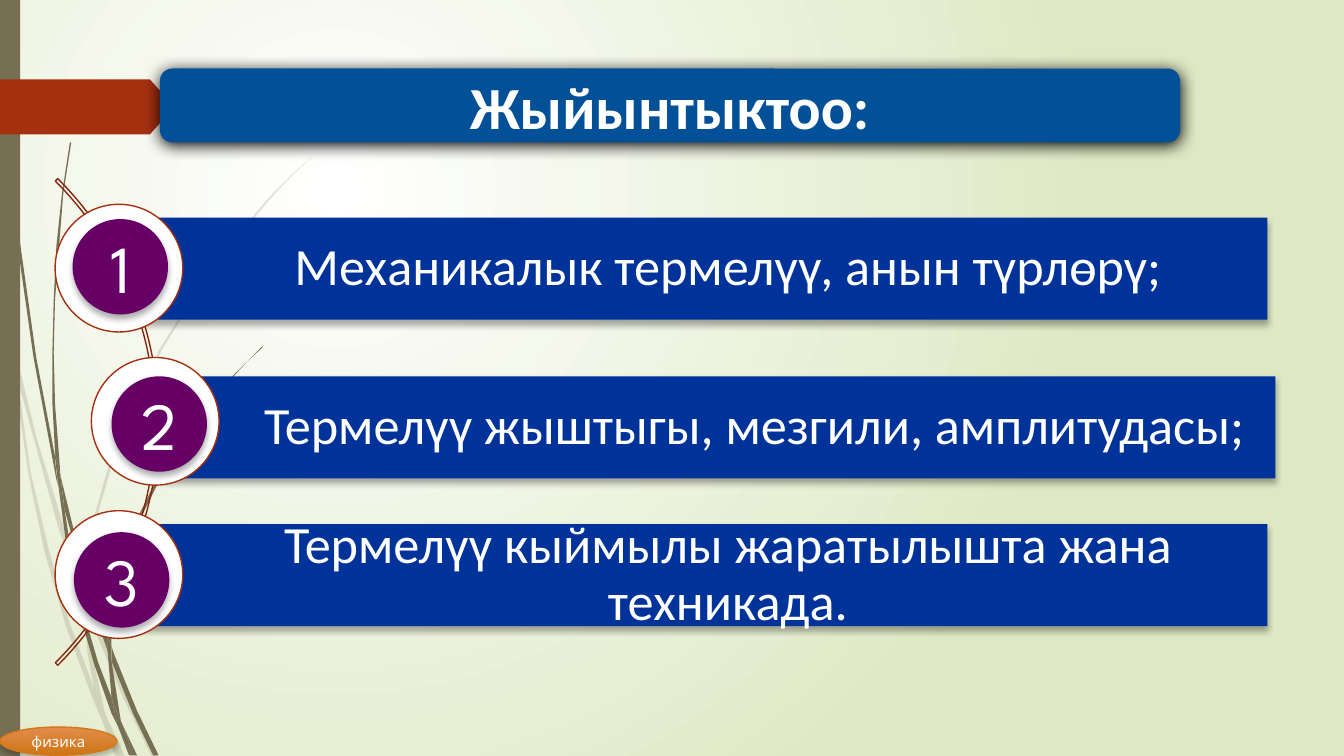
from dataclasses import dataclass
from typing import Optional

import pptx
import pptx.dml.color
import pptx.enum.shapes
import pptx.enum.text
import pptx.oxml
import pptx.oxml.ns
import pptx.util
from lxml import etree

RGB = pptx.dml.color.RGBColor
Inches = pptx.util.Inches
Pt = pptx.util.Pt
MSO = pptx.enum.shapes.MSO_SHAPE
ALIGN = pptx.enum.text.PP_ALIGN
ANCHOR = pptx.enum.text.MSO_ANCHOR
qn = pptx.oxml.ns.qn

WHITE = RGB(0xFF, 0xFF, 0xFF)
PALE_GREEN = RGB(0xDF, 0xE8, 0xC4)
OLIVE = RGB(0x76, 0x6F, 0x54)
RUST = RGB(0xA5, 0x30, 0x10)
DARK_RUST = RGB(0x84, 0x26, 0x0D)
ORANGE_LIGHT = RGB(0xE1, 0x8D, 0x4C)
ORANGE_DARK = RGB(0xCF, 0x75, 0x16)
ORANGE_LINE = RGB(0xD4, 0x78, 0x17)
NAVY = RGB(0x00, 0x33, 0x99)
PURPLE = RGB(0x66, 0x00, 0x66)
TITLE_BLUE = RGB(0x02, 0x51, 0x98)

WIDTH = 10
HEIGHT = WIDTH * 9 / 16
TITLE_BOX = (1.19, 0.51, 7.59, 0.55)


@dataclass
class Shadow:
    alpha: int
    blur: float
    dist: float


@dataclass
class Item:
    text: str
    bar: tuple
    ring: tuple
    disc: tuple


SOFT = Shadow(32, 3.5, 2.2)
BADGE_SHADOW = Shadow(25, 3, 2)
TITLE_SHADOW = Shadow(100, 8.5, 1)

ITEMS = [
    Item("Механикалык термелүү, анын түрлөрү;", (0.88, 1.62, 8.55), (0.41, 1.52), (0.54, 1.63)),
    Item("Термелүү жыштыгы, мезгили, амплитудасы;", (1.21, 2.8, 8.28), (0.68, 2.66), (0.83, 2.8)),
    Item("Термелүү кыймылы жаратылышта жана техникада.", (0.88, 3.9, 8.55), (0.41, 3.8), (0.55, 3.96)),
]

PALE_BLADES = [
    [(0.08, 2.63), (0.06, 2.41), (0, 2.11), (0, 2.24), (0.08, 2.58)],
    [(0.43, 3.91), (0.63, 4.49), (0.64, 4.4), (0.47, 3.9), (0.27, 3.25), (0.11, 2.59), (0.13, 2.82)],
    [(0.69, 4.55), (0.66, 4.47), (0.66, 4.58), (0.92, 5.2), (1.13, 5.63), (1.16, 5.63), (0.95, 5.19)],
    [(0.89, 5.63), (0.93, 5.63), (0.79, 5.33)],
    [(0.7, 5.12), (0.52, 4.64), (0.36, 4.08), (0.23, 3.52), (0.13, 2.82), (0.08, 2.63),
     (0.21, 3.52), (0.33, 4.1), (0.49, 4.66), (0.69, 5.2), (0.76, 5.36), (0.74, 5.3)],
    [(0.63, 4.49), (0.65, 4.85), (0.7, 5.12), (0.72, 5.19), (0.79, 5.33), (0.78, 5.3),
     (0.68, 4.84), (0.66, 4.58), (0.66, 4.56)],
    [(0.66, 4.38), (0.7, 3.92), (0.83, 3.47), (1.0, 3.03), (1.2, 2.61), (1.45, 2.21), (1.71, 1.84),
     (2.01, 1.48), (2.17, 1.31), (2.34, 1.15), (2.17, 1.3), (2.0, 1.47), (1.7, 1.83),
     (1.43, 2.21), (1.18, 2.61), (0.97, 3.03), (0.81, 3.46), (0.68, 3.92), (0.64, 4.38),
     (0.64, 4.4), (0.66, 4.47)],
    [(0.76, 5.36), (0.86, 5.63), (0.89, 5.63)],
    [(0.66, 4.56), (0.66, 4.58), (0.66, 4.47), (0.64, 4.4), (0.63, 4.49)],
    [(0.72, 5.19), (0.7, 5.12), (0.74, 5.3), (0.76, 5.36), (0.89, 5.63), (0.79, 5.33)],
]

DARK_BLADES = [
    [(0.05, 0.82), (0.12, 1.75), (0.25, 2.66), (0.42, 3.57), (0.43, 3.61), (0.41, 3.43), (0.41, 3.4),
     (0.27, 2.66), (0.14, 1.74), (0.06, 0.82), (0.03, 0.36), (0.03, 0), (0.02, 0), (0.03, 0.36)],
    [(0.66, 4.44), (0.8, 4.84), (0.8, 4.73), (0.7, 4.43), (0.56, 3.99), (0.45, 3.54), (0.48, 3.79)],
    [(0.85, 4.87), (0.83, 4.81), (0.83, 4.92), (0.99, 5.31), (1.14, 5.62), (1.18, 5.62), (1.02, 5.29)],
    [(0.83, 5.19), (0.73, 4.93), (0.62, 4.55), (0.54, 4.17), (0.48, 3.79), (0.43, 3.58),
     (0.51, 4.18), (0.59, 4.56), (0.7, 4.94), (0.83, 5.31), (0.88, 5.41), (0.87, 5.38)],
    [(0.45, 3.54), (0.44, 3.4), (0.41, 3.01), (0.4, 2.62), (0.41, 2.23), (0.44, 1.83), (0.47, 1.45),
     (0.53, 1.06), (0.52, 1.06), (0.46, 1.45), (0.42, 1.83), (0.4, 2.23), (0.39, 2.62),
     (0.39, 3.0), (0.41, 3.37)],
    [(1, 5.62), (1.02, 5.62), (0.91, 5.39)],
    [(0.43, 3.58), (0.48, 3.79), (0.45, 3.54), (0.41, 3.37), (0.41, 3.4)],
    [(0.83, 4.75), (0.86, 4.44), (0.94, 4.14), (1.05, 3.85), (1.19, 3.57), (1.35, 3.3), (1.53, 3.05),
     (1.73, 2.81), (1.84, 2.69), (1.96, 2.58), (1.95, 2.58), (1.84, 2.69), (1.73, 2.8),
     (1.53, 3.04), (1.33, 3.29), (1.17, 3.56), (1.03, 3.84), (0.92, 4.13), (0.83, 4.43),
     (0.8, 4.73), (0.83, 4.81)],
    [(0.88, 5.41), (0.96, 5.62), (0.98, 5.62)],
    [(0.8, 4.84), (0.83, 5.19), (0.87, 5.3), (0.91, 5.39), (0.9, 5.37), (0.83, 4.92), (0.81, 4.88)],
    [(0.8, 4.84), (0.81, 4.88), (0.83, 4.92), (0.83, 4.81), (0.8, 4.73)],
    [(0.87, 5.3), (0.83, 5.19), (0.87, 5.38), (0.88, 5.41), (0.98, 5.62), (1, 5.62), (0.91, 5.39)],
]


def paint(sp, fill: Optional[RGB], line: Optional[RGB] = None) -> None:
    if fill is None:
        sp.fill.background()
    else:
        sp.fill.solid()
        sp.fill.fore_color.rgb = fill
    if line is None:
        sp.line.fill.background()
    else:
        sp.line.color.rgb = line
        sp.line.width = Pt(0.75)


def add_shadow(sp, shadow: Shadow) -> None:
    effects = sp._element.spPr.find(qn("a:effectLst"))
    outer = etree.SubElement(effects, qn("a:outerShdw"), blurRad=str(Pt(shadow.blur)),
                             dist=str(Pt(shadow.dist)), dir="5400000", algn="ctr", rotWithShape="0")
    color = etree.SubElement(outer, qn("a:srgbClr"), val="000000")
    etree.SubElement(color, qn("a:alpha"), val=str(shadow.alpha * 1000))


def add_figure(s, kind, box: tuple, fill: Optional[RGB], line: Optional[RGB] = None,
               shadow: Optional[Shadow] = None):
    sp = s.shapes.add_shape(kind, *map(Inches, box))
    sp.shadow.inherit = False
    paint(sp, fill, line)
    if shadow:
        add_shadow(sp, shadow)
    return sp


def write(sp, text: str, size: float, font: str, bold: bool = False):
    tf = sp.text_frame
    tf.word_wrap = True
    tf.vertical_anchor = ANCHOR.MIDDLE
    p = tf.paragraphs[0]
    p.alignment = ALIGN.CENTER
    r = p.add_run()
    r.text = text
    for key, value in {"size": Pt(size), "name": font, "bold": bold}.items():
        setattr(r.font, key, value)
    r.font.color.rgb = WHITE
    return tf


def add_blade(s, points: list, alpha: int) -> None:
    outline = [(Inches(x), Inches(y)) for x, y in points]
    builder = s.shapes.build_freeform(*outline[0])
    builder.add_line_segments(outline[1:], close=True)
    sp = builder.convert_to_shape()
    sp.shadow.inherit = False
    paint(sp, OLIVE)
    if alpha < 100:
        color = sp._element.spPr.find(".//" + qn("a:srgbClr"))
        etree.SubElement(color, qn("a:alpha"), val=str(alpha * 1000))


def set_gradient(fill, start: RGB, end: RGB) -> None:
    fill.gradient()
    for stop, position, color in zip(fill.gradient_stops, (0, 1), (start, end)):
        stop.position = position
        stop.color.rgb = color


def add_background(s) -> None:
    set_gradient(s.background.fill, WHITE, PALE_GREEN)
    grad = s._element.find(".//" + qn("a:gradFill"))
    grad.remove(grad.find(qn("a:lin")))
    radial = etree.SubElement(grad, qn("a:path"), {"path": "circle"})
    etree.SubElement(radial, qn("a:fillToRect"), l="50000", t="50000", r="100000", b="100000")


def add_item(s, item: Item) -> None:
    box = (*item.bar, 0.76)
    add_figure(s, MSO.RECTANGLE, box, NAVY, shadow=SOFT)
    tf = write(s.shapes.add_textbox(*map(Inches, box)), item.text, 28, "Calibri")
    tf.paragraphs[0].line_spacing = 0.9
    margins = {"margin_left": 0.6, "margin_top": 0.08, "margin_right": 0.08, "margin_bottom": 0.08}
    for key, value in margins.items():
        setattr(tf, key, Inches(value))
    add_figure(s, MSO.OVAL, (*item.ring, 0.95, 0.95), WHITE, RUST)


def add_title(s) -> None:
    add_figure(s, MSO.ROUNDED_RECTANGLE, TITLE_BOX, TITLE_BLUE, shadow=TITLE_SHADOW)
    sp = s.shapes.title
    for key, value in zip(("left", "top", "width", "height"), TITLE_BOX):
        setattr(sp, key, Inches(value))
    tf = write(sp, "Жыйынтыктоо:", 32, "Calibri", True)
    tf.auto_size = pptx.enum.text.MSO_AUTO_SIZE.NONE
    s.shapes._spTree.append(sp._element)


def main() -> None:
    prs = pptx.Presentation()
    prs.slide_width, prs.slide_height = Inches(WIDTH), Inches(HEIGHT)
    s = prs.slides.add_slide(prs.slide_layouts[5])
    add_background(s)
    for blades, alpha in ((PALE_BLADES, 20), (DARK_BLADES, 100)):
        for points in blades:
            add_blade(s, points, alpha)
    add_figure(s, MSO.RECTANGLE, (0, 0, 0.15, HEIGHT), OLIVE)
    arrow = add_figure(s, MSO.PENTAGON, (0, 0.59, 1.3, 0.41), RUST)
    arrow.adjustments[0] = 0.45
    badge = add_figure(s, MSO.OVAL, (0, 5.41, 0.87, 0.21), ORANGE_DARK, ORANGE_LINE, BADGE_SHADOW)
    set_gradient(badge.fill, ORANGE_LIGHT, ORANGE_DARK)
    badge.fill.gradient_angle = 270
    write(badge, "физика", 8, "League Spartan")
    arc = add_figure(s, MSO.BLOCK_ARC, (-3.94, 0.58, 5.12, 5.12), None, DARK_RUST)
    for i, value in enumerate((189, 27, 0.005)):
        arc.adjustments[i] = value
    for item in ITEMS:
        add_item(s, item)
    for number, item in enumerate(ITEMS, 1):
        disc = add_figure(s, MSO.OVAL, (*item.disc, 0.71, 0.71), PURPLE, shadow=SOFT)
        write(disc, str(number), 36, "League Spartan")
    add_title(s)
    prs.save("out.pptx")


if __name__ == "__main__":
    main()
